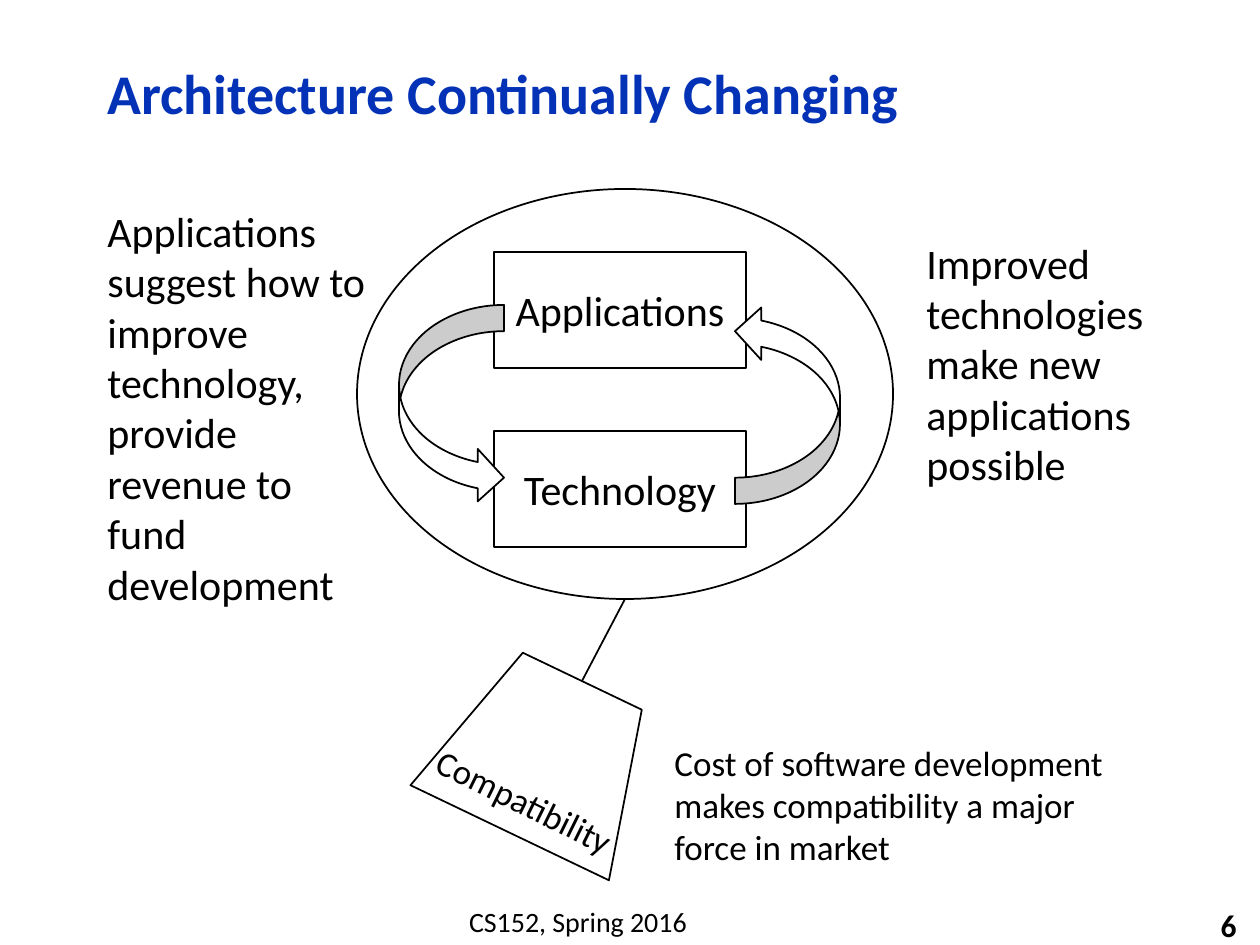
from dataclasses import dataclass, field
from typing import Any

import pptx
import pptx.dml.color
import pptx.enum.shapes
import pptx.enum.text
import pptx.oxml.ns
import pptx.util
from lxml import etree

SHAPE = pptx.enum.shapes.MSO_SHAPE
ALIGN = pptx.enum.text.PP_ALIGN
ANCHOR = pptx.enum.text.MSO_ANCHOR
PX_PER_INCH = 126


@dataclass(frozen=True)
class Theme:
    font: str = "Calibri"
    ink: str = "000000"
    paper: str = "FFFFFF"
    title_color: str = "0332B7"
    title: int = 32
    body: int = 24
    note: int = 20
    number: int = 18
    footer: int = 16
    line: int = 1


THEME = Theme()


@dataclass(frozen=True)
class Box:
    left: int
    top: int
    width: int
    height: int


@dataclass(frozen=True)
class Label:
    text: str
    box: Box
    size: int
    color: str = THEME.ink
    bold: bool = False
    rotation: float = 0
    frame: dict[str, Any] = field(default_factory=dict)
    paragraph: dict[str, Any] = field(default_factory=dict)


@dataclass(frozen=True)
class Figure:
    kind: Any
    box: Box
    text: str = ""
    rotation: float = 0
    flips: tuple[str, ...] = ()


def px(n: float) -> int:
    return round(n * 914400 / PX_PER_INCH)


def emu(box: Box) -> list[int]:
    return [px(n) for n in (box.left, box.top, box.width, box.height)]


def rgb(value: str) -> Any:
    return pptx.dml.color.RGBColor.from_string(value)


def apply(target: Any, values: dict[str, Any]) -> None:
    for name, value in values.items():
        setattr(target, name, value)


def write(sp: Any, label: Label) -> None:
    tf = sp.text_frame
    apply(tf, {"word_wrap": True, **label.frame})
    p = tf.paragraphs[0]
    apply(p, label.paragraph)
    r = p.add_run()
    r.text = label.text
    apply(r.font, {"name": THEME.font, "size": pptx.util.Pt(label.size), "bold": label.bold})
    r.font.color.rgb = rgb(label.color)


def draw_label(s: Any, label: Label) -> None:
    sp = s.shapes.add_textbox(*emu(label.box))
    sp.rotation = label.rotation
    write(sp, label)


def outline(shape: Any) -> None:
    shape.line.color.rgb = rgb(THEME.ink)
    shape.line.width = pptx.util.Pt(THEME.line)


def draw_figure(s: Any, figure: Figure) -> None:
    sp = s.shapes.add_shape(figure.kind, *emu(figure.box))
    sp.shadow.inherit = False
    sp.rotation = figure.rotation
    sp.fill.solid()
    sp.fill.fore_color.rgb = rgb(THEME.paper)
    outline(sp)
    xfrm = sp.element.spPr.get_or_add_xfrm()
    for flip in figure.flips:
        xfrm.set(flip, "1")
    if figure.text:
        write(sp, Label(figure.text, figure.box, THEME.body,
                        frame={"vertical_anchor": ANCHOR.MIDDLE},
                        paragraph={"alignment": ALIGN.CENTER}))


def draw_line(s: Any, x1: int, y1: int, x2: int, y2: int) -> None:
    line = s.shapes.add_connector(pptx.enum.shapes.MSO_CONNECTOR.STRAIGHT,
                                  px(x1), px(y1), px(x2), px(y2))
    outline(line)
    etree.SubElement(line.element.spPr, pptx.oxml.ns.qn("a:effectLst"))


FIGURES = [
    Figure(SHAPE.OVAL, Box(357, 189, 536, 410)),
    Figure(SHAPE.FLOWCHART_MANUAL_OPERATION, Box(436, 673, 220, 168),
           rotation=25.6, flips=("flipV",)),
    Figure(SHAPE.RECTANGLE, Box(494, 252, 252, 116), "Applications"),
    Figure(SHAPE.RECTANGLE, Box(494, 431, 252, 116), "Technology"),
    Figure(SHAPE.CURVED_RIGHT_ARROW, Box(399, 305, 105, 199)),
    Figure(SHAPE.CURVED_RIGHT_ARROW, Box(735, 305, 105, 199), flips=("flipH", "flipV")),
]

LABELS = [
    Label("Architecture Continually Changing", Box(95, 45, 1005, 102), THEME.title,
          THEME.title_color, bold=True, frame={"vertical_anchor": ANCHOR.MIDDLE},
          paragraph={"line_spacing": 0.9}),
    Label("Applications suggest how to improve technology, provide revenue to fund development",
          Box(95, 199, 294, 420), THEME.body),
    Label("Improved technologies make new applications possible",
          Box(914, 231, 294, 267), THEME.body),
    Label("Compatibility", Box(417, 774, 217, 55), THEME.note, rotation=26.3,
          frame={"word_wrap": False}),
    Label("Cost of software development makes compatibility a major force in market",
          Box(662, 735, 504, 140), THEME.note),
    Label("CS152, Spring 2016", Box(368, 898, 420, 47), THEME.footer,
          paragraph={"alignment": ALIGN.CENTER}),
    Label("6", Box(987, 905, 262, 40), THEME.number, bold=True,
          frame={"vertical_anchor": ANCHOR.MIDDLE, "word_wrap": False},
          paragraph={"alignment": ALIGN.RIGHT}),
]


def main() -> None:
    prs = pptx.Presentation()
    apply(prs, {"slide_width": px(1260), "slide_height": px(945)})
    s = prs.slides.add_slide(prs.slide_layouts[6])
    for figure in FIGURES:
        draw_figure(s, figure)
    draw_line(s, 582, 681, 625, 599)
    for label in LABELS:
        draw_label(s, label)
    prs.save("out.pptx")


if __name__ == "__main__":
    main()
